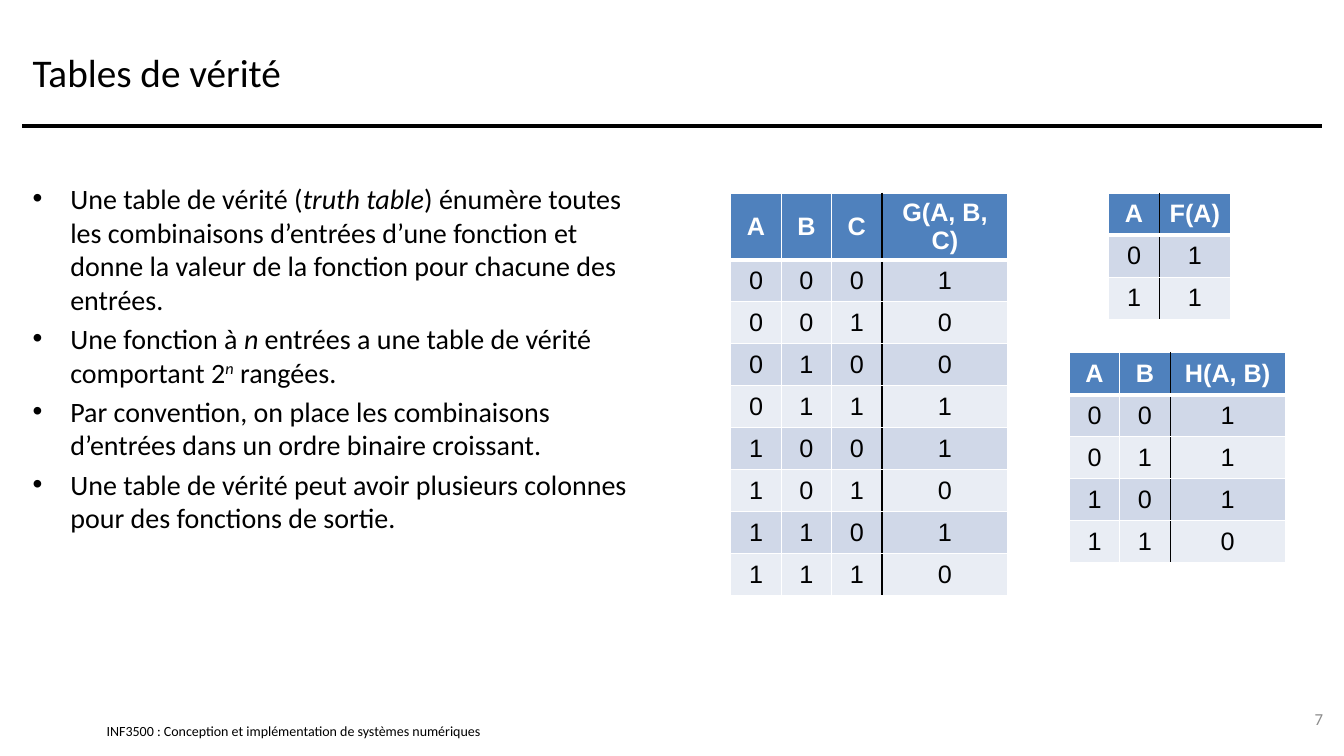
from itertools import product
from lxml.etree import SubElement as Sub
from pptx import Presentation
from pptx.dml.color import RGBColor as Rgb
from pptx.enum.shapes import MSO_CONNECTOR as Conn
from pptx.enum.text import MSO_ANCHOR as Anchor, MSO_AUTO_SIZE as Auto, PP_ALIGN as Align
from pptx.oxml.ns import qn
from pptx.util import Inches, Pt

TITLE = "Tables de vérité"
POINTS = [
    [("Une table de vérité (", ""), ("truth table", "i"),
     (") énumère toutes les combinaisons d’entrées d’une fonction et donne "
      "la valeur de la fonction pour chacune des entrées.", "")],
    [("Une fonction à ", ""), ("n", "i"),
     (" entrées a une table de vérité comportant 2", ""), ("n", "i^"), (" rangées.", "")],
    [("Par convention, on place les combinaisons d’entrées dans un ordre binaire croissant.", "")],
    [("Une table de vérité peut avoir plusieurs colonnes pour des fonctions de sortie.", "")],
]
FOOTER = "INF3500 : Conception et implémentation de systèmes numériques"
NUMBER = "7"
TRUTHS = [
    {"head": ["A", "F(A)"], "out": "11", "left": 132, "top": 23, "last": 8.5},
    {"head": ["A", "B", "C", "G(A, B, C)"], "out": "10011010", "left": 87, "top": 23, "last": 15},
    {"head": ["A", "B", "H(A, B)"], "out": "1110", "left": 127.3, "top": 42, "last": 13.7},
]
INK = {"black": "000000", "white": "FFFFFF", "grey": "8C8C8C",
       "head": "4F81BD", "odd": "D0D8E8", "even": "E9EDF4"}

COLS, ROWS = 160, 90
CELL, ROW = 6, 5
EDGE, WIDE, RULE = 2.67, 154.67, 15


def grid(n):
    return Inches(n / 12)


def place(shape, left, top, width, height):
    shape.left, shape.top = grid(left), grid(top)
    shape.width, shape.height = grid(width), grid(height)


def frame(shape, anchor):
    text = shape.text_frame
    text.word_wrap = True
    text.auto_size = Auto.NONE
    text.vertical_anchor = anchor
    return text


def write(para, words, size, ink="black", face="Calibri", align=Align.LEFT, style=""):
    para.alignment = align
    run = para.add_run()
    run.text = words
    font = run.font
    font.size, font.name = Pt(size), face
    font.color.rgb = Rgb.from_string(INK[ink])
    font.bold, font.italic = "b" in style, "i" in style
    if "^" in style:
        font._element.set("baseline", "30000")


def border(cell, side, ink, width):
    line = Sub(cell._tc.get_or_add_tcPr(), qn("a:ln" + side), w=str(Pt(width)))
    Sub(Sub(line, qn("a:solidFill")), qn("a:srgbClr"), val=INK[ink])


def note(slide, words, box, size, ink, align):
    shape = slide.shapes.add_textbox(0, 0, 0, 0)
    place(shape, *box)
    text = frame(shape, Anchor.MIDDLE)
    write(text.paragraphs[0], words, size, ink, align=align)
    return text


def truth(slide, item):
    head = item["head"]
    ins = product("01", repeat=len(head) - 1)
    lines = [head] + [[*bits, out] for bits, out in zip(ins, item["out"])]
    wides = [CELL] * (len(head) - 1) + [item["last"]]
    table = slide.shapes.add_table(
        len(lines), len(head), grid(item["left"]), grid(item["top"]),
        grid(sum(wides)), grid(ROW * len(lines))).table
    for col, wide in zip(table.columns, wides):
        col.width = grid(wide)
    for r, line in enumerate(lines):
        table.rows[r].height = grid(ROW)
        for c, words in enumerate(line):
            cell = table.cell(r, c)
            split = {"L": len(head) - 1, "R": len(head) - 2}
            for side in "LRTB":
                ink = "black" if split.get(side) == c else "white"
                thick = (side, r) in (("B", 0), ("T", 1))
                border(cell, side, ink, 3 if thick else 1)
            fill = "head" if r == 0 else "odd" if r % 2 else "even"
            cell.fill.solid()
            cell.fill.fore_color.rgb = Rgb.from_string(INK[fill])
            cell.vertical_anchor = Anchor.MIDDLE
            write(cell.text_frame.paragraphs[0], words, 18,
                  "black" if r else "white", "Arial", Align.CENTER, "" if r else "b")


def main():
    deck = Presentation()
    deck.slide_width, deck.slide_height = grid(COLS), grid(ROWS)
    slide = deck.slides.add_slide(deck.slide_layouts[1])
    title, body = slide.placeholders

    foot = note(slide, FOOTER, (12.7, 86, 61.3, 2), 10, "black", Align.LEFT)
    foot.margin_left = foot.margin_right = foot.margin_top = foot.margin_bottom = 0

    rule = slide.shapes.add_connector(
        Conn.STRAIGHT, grid(EDGE), grid(RULE), grid(EDGE + WIDE), grid(RULE))
    rule.line.color.rgb = Rgb.from_string(INK["black"])
    rule.line.width = Pt(3)
    Sub(rule._element.spPr, qn("a:effectLst"))

    place(title, EDGE, 2, WIDE, RULE - 2)
    write(frame(title, Anchor.MIDDLE).paragraphs[0], TITLE, 28)

    place(body, EDGE, 21, 76, 61)
    text = frame(body, Anchor.TOP)
    for i, point in enumerate(POINTS):
        para = text.add_paragraph() if i else text.paragraphs[0]
        para.space_before = Pt(4 if i else 0)
        props = para._p.get_or_add_pPr()
        props.set("marL", str(grid(4.5)))
        props.set("indent", str(-grid(4.5)))
        Sub(props, qn("a:buFont"), typeface="Arial")
        Sub(props, qn("a:buChar"), char="•")
        for words, style in point:
            write(para, words, 20, style=style)

    note(slide, NUMBER, (150.7, 83.2, 8, 4.8), 12, "grey", Align.RIGHT)
    for item in TRUTHS:
        truth(slide, item)
    deck.save("out.pptx")


if __name__ == "__main__":
    main()
